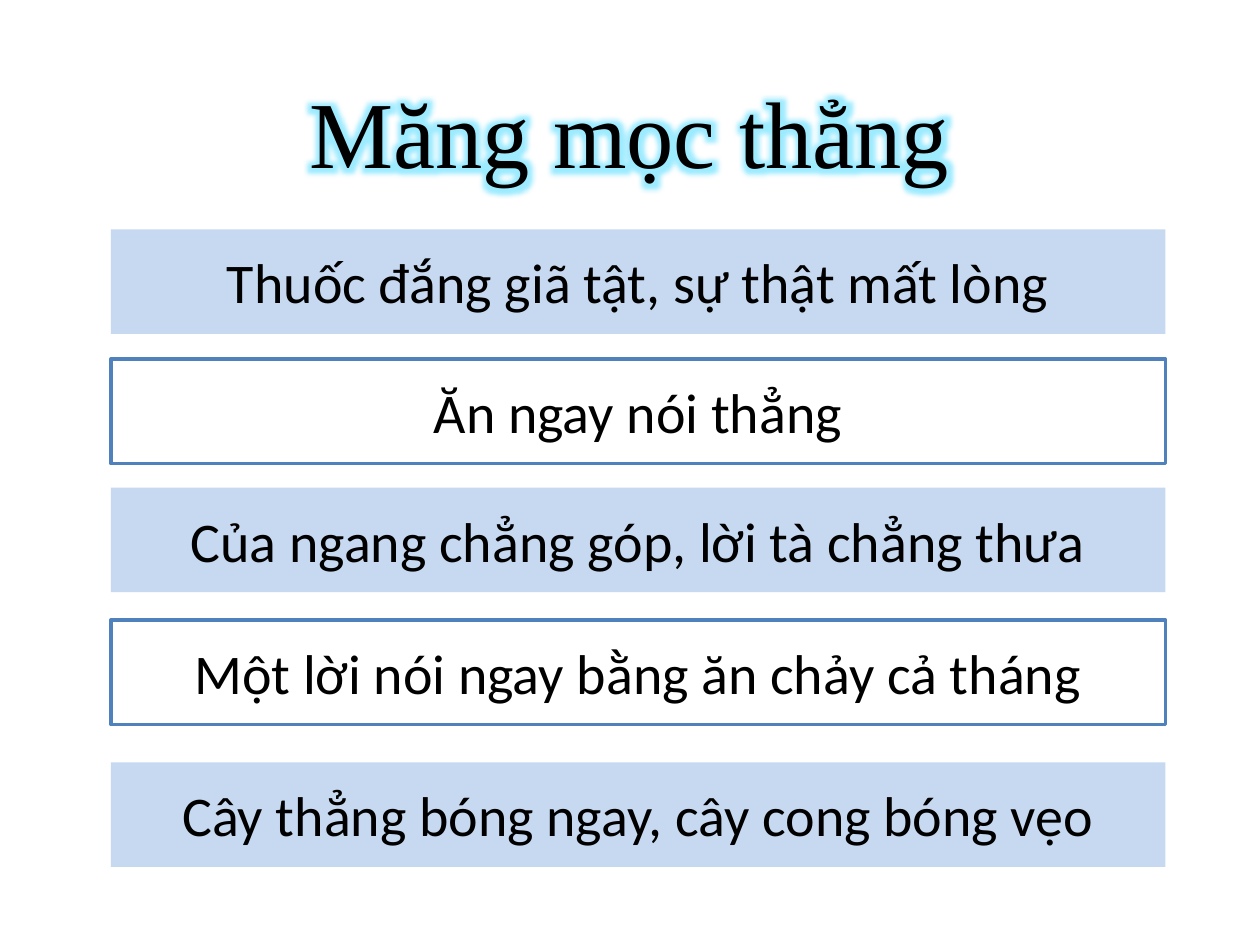
from lxml import etree
from pptx import Presentation
from pptx.dml.color import RGBColor
from pptx.enum.shapes import MSO_SHAPE
from pptx.enum.text import MSO_ANCHOR, MSO_AUTO_SIZE, PP_ALIGN
from pptx.oxml.ns import qn
from pptx.util import Inches, Pt

RECT = MSO_SHAPE.RECTANGLE
CENTER = PP_ALIGN.CENTER
MIDDLE = MSO_ANCHOR.MIDDLE
NO_FIT = MSO_AUTO_SIZE.NONE

BLACK = RGBColor(0x00, 0x00, 0x00)
WHITE = RGBColor(0xFF, 0xFF, 0xFF)
PALE_BLUE = RGBColor(0xC6, 0xD9, 0xF1)
BLUE = RGBColor(0x4F, 0x81, 0xBD)
GLOW = RGBColor(0x0A, 0xCD, 0xFF)

HEADING_FONT = {"name": "Times New Roman", "size": Pt(54)}
BAR_FONT = {"name": "Calibri", "size": Pt(32)}

SLIDE_W, SLIDE_H = 10, 7.5
BAR_LEFT, BAR_W, BAR_H = 0.88, 8.37, 0.83

# Top of each bar and its proverb
PROVERBS = [
    (1.82, "Thuốc đắng giã tật, sự thật mất lòng"),
    (2.85, "Ăn ngay nói thẳng"),
    (3.87, "Của ngang chẳng góp, lời tà chẳng thưa"),
    (4.92, "Một lời nói ngay bằng ăn chảy cả tháng"),
    (6.05, "Cây thẳng bóng ngay, cây cong bóng vẹo"),
]


def write_text(sp, text, font, **frame):
    """Put one centred line into a shape and return its run."""
    tf = sp.text_frame
    for name, value in {"word_wrap": True, **frame}.items():
        setattr(tf, name, value)
    p = tf.paragraphs[0]
    p.alignment = CENTER
    r = p.add_run()
    r.text = text
    r.font.color.rgb = BLACK
    for name, value in font.items():
        setattr(r.font, name, value)
    return r


def add_glow(r, color, radius, alpha):
    """Add a soft glow, which must follow the run's fill."""
    effects = etree.Element(qn("a:effectLst"))
    glow = etree.SubElement(effects, qn("a:glow"), rad=str(radius))
    clr = etree.SubElement(glow, qn("a:srgbClr"), val=str(color))
    etree.SubElement(clr, qn("a:alpha"), val=str(alpha * 1000))
    r.font.fill  # the solid fill is already present
    r.font._element.find(qn("a:solidFill")).addnext(effects)


def add_heading(slide, text, box):
    sp = slide.shapes.add_textbox(*map(Inches, box))
    r = write_text(sp, text, HEADING_FONT)
    add_glow(r, GLOW, Inches(0.15), 40)


def place_bar(sp, text, box, outlined):
    sp.left, sp.top, sp.width, sp.height = map(Inches, box)
    sp.fill.solid()
    sp.fill.fore_color.rgb = WHITE if outlined else PALE_BLUE
    if outlined:
        sp.line.color.rgb = BLUE
        sp.line.width = Pt(2)
    else:
        sp.line.fill.background()
    write_text(sp, text, BAR_FONT, vertical_anchor=MIDDLE, auto_size=NO_FIT)


def add_proverbs(slide, proverbs, left, width, height):
    # The first bar is the slide title; every second bar is outlined
    for i, (top, text) in enumerate(proverbs):
        box = (left, top, width, height)
        if i == 0:
            sp = slide.shapes.title
        else:
            sp = slide.shapes.add_shape(RECT, *map(Inches, box))
            sp.shadow.inherit = False
        place_bar(sp, text, box, outlined=i % 2 == 1)


def main():
    prs = Presentation()
    prs.slide_width, prs.slide_height = Inches(SLIDE_W), Inches(SLIDE_H)
    slide = prs.slides.add_slide(prs.slide_layouts[5])
    add_heading(slide, "Măng mọc thẳng", (1.7, 0.54, 6.59, 1.01))
    add_proverbs(slide, PROVERBS, BAR_LEFT, BAR_W, BAR_H)
    prs.save("out.pptx")


if __name__ == "__main__":
    main()
